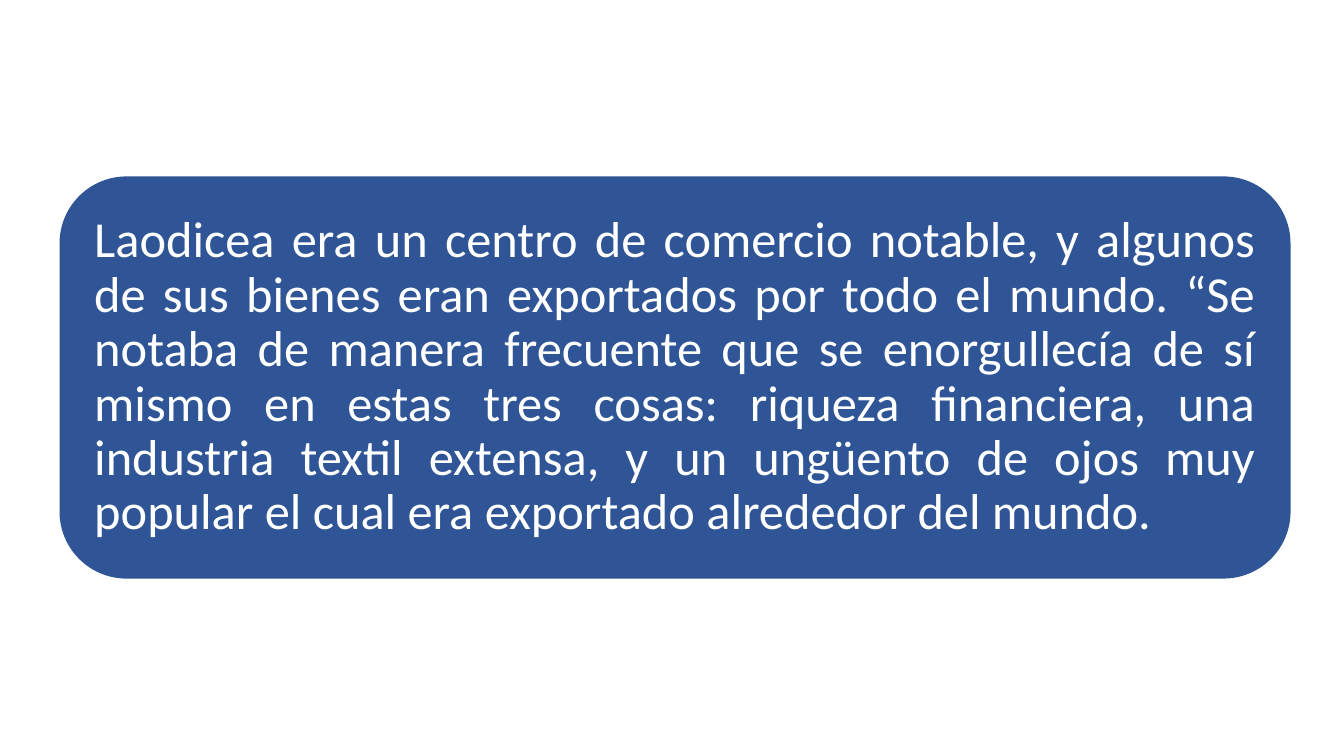
from dataclasses import dataclass

from pptx import Presentation
from pptx.dml.color import RGBColor
from pptx.enum.shapes import MSO_SHAPE
from pptx.enum.text import MSO_ANCHOR, PP_ALIGN
from pptx.util import Inches, Pt

ROUNDED = MSO_SHAPE.ROUNDED_RECTANGLE
MIDDLE = MSO_ANCHOR.MIDDLE
JUSTIFY = PP_ALIGN.JUSTIFY
BLANK_LAYOUT = 6


@dataclass(frozen=True)
class Theme:
    panel: RGBColor = RGBColor(0x2F, 0x55, 0x97)
    text: RGBColor = RGBColor(0xFF, 0xFF, 0xFF)
    font: str = "Calibri"
    body_size: int = 36


@dataclass(frozen=True)
class Panel:
    left: float
    top: float
    width: float
    height: float
    inset: float
    text: str


THEME = Theme()
LAODICEA = Panel(
    0.59, 1.75, 12.21, 3.99, 0.15,
    "Laodicea era un centro de comercio notable, y algunos de sus bienes "
    "eran exportados por todo el mundo. “Se notaba de manera frecuente que "
    "se enorgullecía de sí mismo en estas tres cosas: riqueza financiera, "
    "una industria textil extensa, y un ungüento de ojos muy popular el cual "
    "era exportado alrededor del mundo.",
)


def add_panel(s, panel: Panel) -> None:
    sp = s.shapes.add_shape(
        ROUNDED, Inches(panel.left), Inches(panel.top),
        Inches(panel.width), Inches(panel.height),
    )
    sp.shadow.inherit = False
    sp.fill.solid()
    sp.fill.fore_color.rgb = THEME.panel
    sp.line.fill.background()

    tf = sp.text_frame
    tf.word_wrap = True
    tf.vertical_anchor = MIDDLE
    tf.margin_left = tf.margin_right = Inches(panel.inset)
    tf.margin_top = tf.margin_bottom = Inches(panel.inset)

    p = tf.paragraphs[0]
    p.text = panel.text
    p.alignment = JUSTIFY
    p.line_spacing = 0.9
    p.font.name = THEME.font
    p.font.size = Pt(THEME.body_size)
    p.font.color.rgb = THEME.text


def main() -> None:
    prs = Presentation()
    prs.slide_width = Inches(13.33)
    prs.slide_height = Inches(7.5)
    s = prs.slides.add_slide(prs.slide_layouts[BLANK_LAYOUT])
    add_panel(s, LAODICEA)
    prs.save("out.pptx")


if __name__ == "__main__":
    main()
